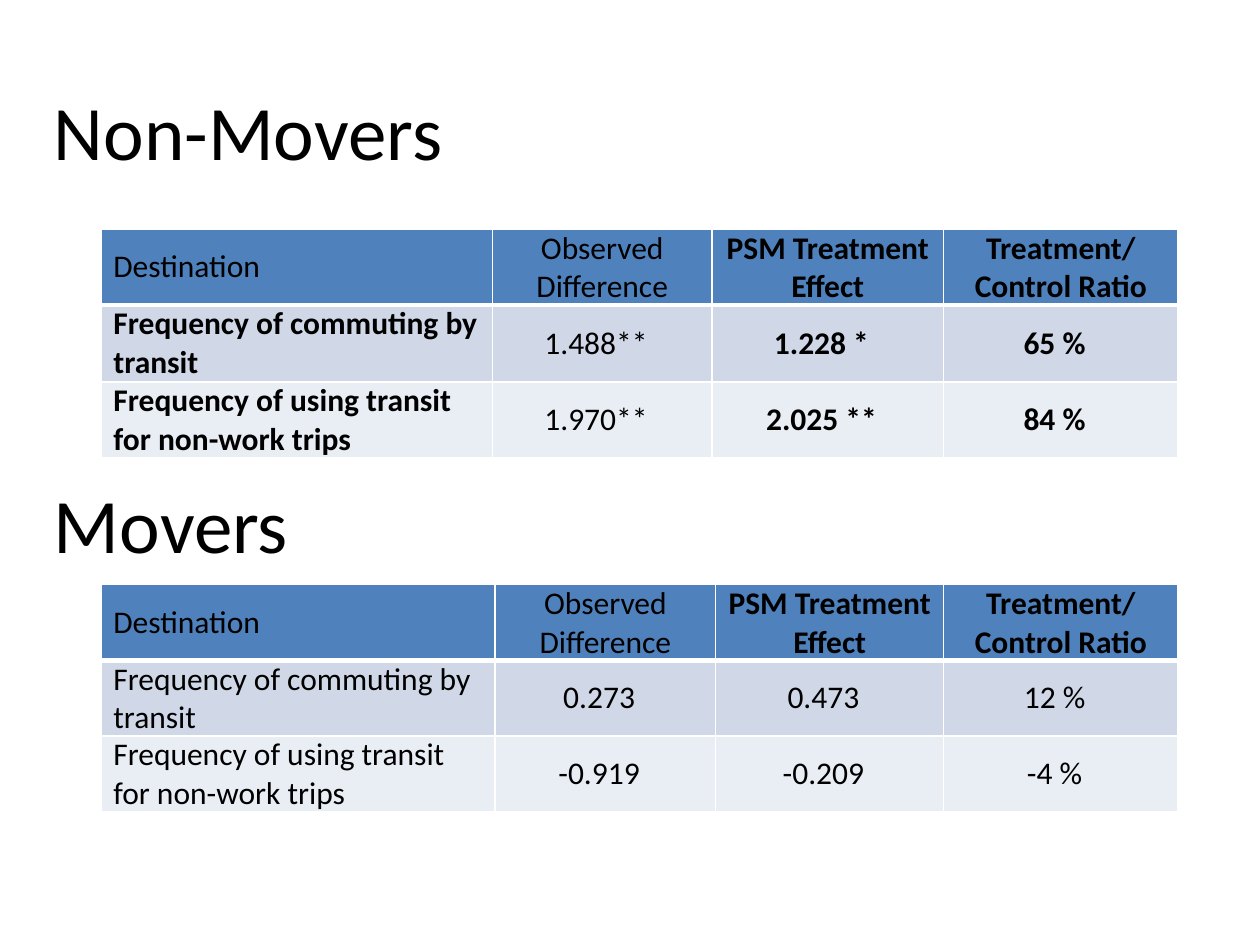
from lxml.etree import SubElement
from pptx import Presentation
from pptx.dml.color import RGBColor
from pptx.enum.text import MSO_ANCHOR, PP_ALIGN
from pptx.oxml.ns import qn
from pptx.util import Inches, Pt


def color(hex_value):
    return RGBColor.from_string(hex_value)


def write(frame, text, size=18, bold=False, align=PP_ALIGN.LEFT):
    paragraph = frame.paragraphs[0]
    paragraph.alignment = align
    run = paragraph.add_run()
    run.text = text
    run.font.name = "Calibri"
    run.font.size = Pt(size)
    run.font.bold = bold
    run.font.color.rgb = color("000000")


header = ["Destination", "Observed Difference", "PSM Treatment Effect", "Treatment/ Control Ratio"]
commuting = "Frequency of commuting by transit"
non_work = "Frequency of using transit for non-work trips"
row_fills = ["4F81BD", "D0D8E8", "E9EDF4"]

groups = [
    {
        "heading": "Non-Movers", "heading_top": 0.52, "results_top": 1.82,
        "widths": [3.11, 1.74, 1.84, 1.86], "heights": [0.51, 0.61, 0.6],
        "bold_columns": [0, 2, 3],
        "results": [[commuting, "1.488**", "1.228 *", "65 %"],
                    [non_work, "1.970**", "2.025 **", "84 %"]],
    },
    {
        "heading": "Movers", "heading_top": 3.64, "results_top": 4.64,
        "widths": [3.13, 1.75, 1.81, 1.86], "heights": [0.51, 0.51, 0.6],
        "bold_columns": [],
        "results": [[commuting, "0.273", "0.473", "12 %"],
                    [non_work, "-0.919", "-0.209", "-4 %"]],
    },
]

presentation = Presentation()
presentation.slide_width = Inches(10)
presentation.slide_height = Inches(7.5)
slide = presentation.slides.add_slide(presentation.slide_layouts[6])

for group in groups:
    heading = slide.shapes.add_textbox(
        Inches(0.33), Inches(group["heading_top"]), Inches(3.83), Inches(1.02)
    ).text_frame
    heading.word_wrap = True
    heading.vertical_anchor = MSO_ANCHOR.MIDDLE
    write(heading, group["heading"], size=44)

    rows = [header] + group["results"]
    results = slide.shapes.add_table(
        len(rows), len(header), Inches(0.8), Inches(group["results_top"]),
        Inches(sum(group["widths"])), Inches(sum(group["heights"])),
    ).table
    for column, width in zip(results.columns, group["widths"]):
        column.width = Inches(width)
    for row, height in zip(results.rows, group["heights"]):
        row.height = Inches(height)

    for row_index, values in enumerate(rows):
        bold_columns = group["bold_columns"] if row_index else [2, 3]
        for column_index, value in enumerate(values):
            cell = results.cell(row_index, column_index)
            is_result = row_index > 0 and column_index > 0
            cell.margin_left = Inches(0 if is_result else 0.1)
            cell.margin_right = Inches(0.1)
            cell.margin_top = cell.margin_bottom = Inches(0)
            cell.vertical_anchor = MSO_ANCHOR.MIDDLE

            properties = cell._tc.get_or_add_tcPr()
            for side in ["lnL", "lnR", "lnT", "lnB"]:
                under_header = (row_index, side) in [(0, "lnB"), (1, "lnT")]
                border = SubElement(properties, qn(f"a:{side}"), w=str(Pt(3 if under_header else 1)))
                border_fill = SubElement(border, qn("a:solidFill"))
                SubElement(border_fill, qn("a:srgbClr"), val="FFFFFF")

            cell.fill.solid()
            cell.fill.fore_color.rgb = color(row_fills[row_index])
            write(
                cell.text_frame, value, bold=column_index in bold_columns,
                align=PP_ALIGN.CENTER if column_index else PP_ALIGN.LEFT,
            )

presentation.save("out.pptx")
